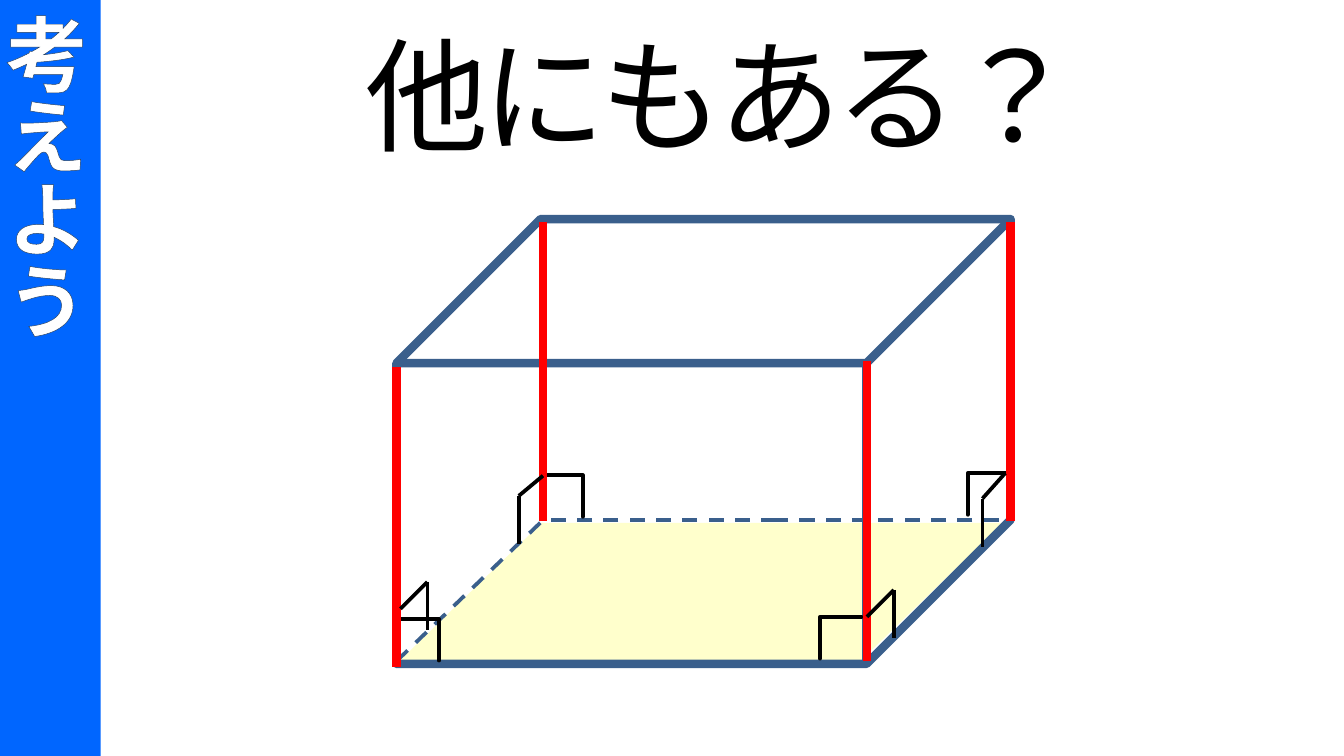
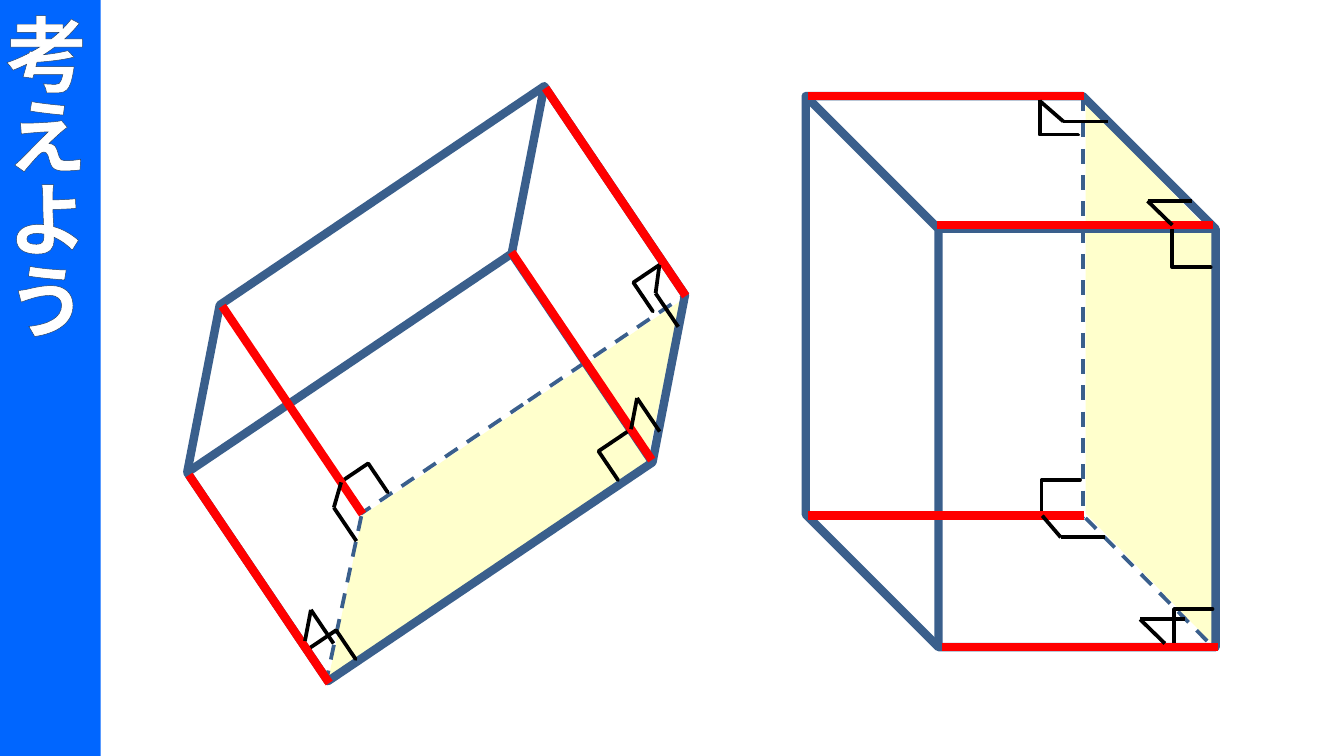
from collections import namedtuple
from math import cos, radians, sin

from lxml import etree
from pptx import Presentation
from pptx.dml.color import RGBColor
from pptx.enum.dml import MSO_LINE
from pptx.enum.lang import MSO_LANGUAGE_ID
from pptx.enum.shapes import MSO_CONNECTOR, MSO_SHAPE
from pptx.enum.text import MSO_ANCHOR, MSO_AUTO_SIZE, PP_ALIGN
from pptx.oxml.ns import qn
from pptx.util import Inches, Pt

STRAIGHT = MSO_CONNECTOR.STRAIGHT
DASH = MSO_LINE.DASH
JAPANESE = MSO_LANGUAGE_ID.JAPANESE
RECTANGLE = MSO_SHAPE.RECTANGLE
PARALLELOGRAM = MSO_SHAPE.PARALLELOGRAM
CUBE = MSO_SHAPE.CUBE
HALF_FRAME = MSO_SHAPE.HALF_FRAME
CENTER = PP_ALIGN.CENTER
MIDDLE, BOTTOM = MSO_ANCHOR.MIDDLE, MSO_ANCHOR.BOTTOM
NO_FIT, GROW = MSO_AUTO_SIZE.NONE, MSO_AUTO_SIZE.SHAPE_TO_FIT_TEXT
TITLE_ONLY, BLANK = 5, 6

FONT = "Noto Sans CJK JP"
WHITE, BLACK = "FFFFFF", "000000"
BAND_BLUE, OUTLINE_BLUE, EDGE_BLUE = "0066FF", "254061", "3A5F8C"
BASE_YELLOW, UPRIGHT_RED = "FFFFCC", "FF0000"
THICK, THIN = 4.5, 2

MODEL_WIDTH, MODEL_HEIGHT = 4.57, 3.31
UPRIGHT_LENGTH, TICK_LENGTH = 2.23, 0.36
BASE = (0, 2.26, 4.51, 1.05)
HIDDEN_FACE = (1.08, 0.01, 3.49, 2.23)
HIDDEN_EDGE = ((1.07, 2.26), (0.01, 3.28))

Corner = namedtuple("Corner", "mark mirrored upright_top tick_start tick_end")
CORNERS = [
    Corner((0.02, 2.99, 0.31, 0.28), False, (0, 1.1), (0.03, 2.9), (0.23, 2.7)),
    Corner((1.09, 1.92, 0.31, 0.28), False, (1.09, 0.02), (1.09, 1.91), (0.91, 2.06)),
    Corner((4.25, 1.89, 0.31, 0.31), True, (4.57, 0.02), (4.53, 1.89), (4.36, 2.08)),
    Corner((3.15, 2.96, 0.31, 0.31), True, (3.5, 1.06), (3.5, 2.96), (3.7, 2.76)),
]


def color(value):
    return RGBColor.from_string(value)


def format_line(line, value, width, dashed=False):
    line.color.rgb = color(value)
    line.width = Pt(width)
    if dashed:
        line.dash_style = DASH


def add_shape(shapes, kind, place, fill=None):
    shape = shapes.add_shape(kind, *map(Inches, place))
    shape.shadow.inherit = False
    if fill:
        shape.fill.solid()
        shape.fill.fore_color.rgb = color(fill)
    else:
        shape.fill.background()
    shape.line.fill.background()
    return shape


def format_run(span, size, value, bold=False):
    span.font.size = Pt(size)
    span.font.bold = bold
    span.font.name = FONT
    span.font.language_id = JAPANESE
    span.font.color.rgb = color(value)
    properties = span.font._element
    east_asian = etree.SubElement(properties, qn("a:ea"))
    east_asian.set("typeface", FONT)
    return properties


def add_band(slide):
    band = add_shape(slide.shapes, RECTANGLE, (-0.04, 0, 0.79, 5.65), BAND_BLUE)
    frame = band.text_frame
    frame.text = "考えよう"
    frame.word_wrap = True
    frame.auto_size = GROW
    frame.vertical_anchor = BOTTOM
    frame.margin_left, frame.margin_right = Inches(0), Inches(0.08)
    frame.margin_top = frame.margin_bottom = Inches(0.05)
    frame._txBody.bodyPr.set("vert", "eaVert")
    para = frame.paragraphs[0]
    para.alignment = CENTER
    para.line_spacing = Pt(50)
    properties = format_run(para.runs[0], 44, WHITE, True)
    outline = etree.Element(qn("a:ln"), w=str(Pt(0.75)))
    fill = etree.SubElement(outline, qn("a:solidFill"))
    etree.SubElement(fill, qn("a:srgbClr"), val=OUTLINE_BLUE)
    properties.insert(0, outline)


def set_title(slide, text):
    title = slide.shapes.title
    title.left, title.top, title.width, title.height = map(
        Inches, (0.73, 0.14, 9.27, 1.1))
    frame = title.text_frame
    frame.text = text
    frame.word_wrap = False
    frame.auto_size = NO_FIT
    frame.vertical_anchor = MIDDLE
    para = frame.paragraphs[0]
    para.alignment = CENTER
    format_run(para.runs[0], 66, BLACK).set("spc", "-300")


def draw_box(slide, box, angle=0):
    left, top, width, height = box
    scale_x, scale_y = width / MODEL_WIDTH, height / MODEL_HEIGHT
    cosine, sine = cos(radians(angle)), sin(radians(angle))
    shapes = slide.shapes.add_group_shape().shapes

    def locate(x, y):
        across = x * scale_x - width / 2
        down = y * scale_y - height / 2
        return (left + width / 2 + across * cosine - down * sine,
                top + height / 2 + across * sine + down * cosine)

    def add_part(kind, place, fill=None, turn=0):
        x, y, wide, high = place
        center_x, center_y = locate(x + wide / 2, y + high / 2)
        if turn:
            wide, high = wide * scale_y, high * scale_x
        else:
            wide, high = wide * scale_x, high * scale_y
        part = add_shape(shapes, kind, (center_x - wide / 2, center_y - high / 2,
                                        wide, high), fill)
        part.rotation = (angle + turn) % 360
        return part

    def add_edge(start, end, value, weight, dashed=False):
        ends = map(Inches, locate(*start) + locate(*end))
        edge = shapes.add_connector(STRAIGHT, *ends)
        format_line(edge.line, value, weight, dashed)
        etree.SubElement(edge._element.spPr, qn("a:effectLst"))

    def add_drop(start, length, value, weight):
        add_edge(start, (start[0], start[1] + length), value, weight)

    base = add_part(PARALLELOGRAM, BASE, BASE_YELLOW)
    base.adjustments[0] = 1.029
    hidden_face = add_part(RECTANGLE, HIDDEN_FACE)
    format_line(hidden_face.line, EDGE_BLUE, THIN, True)
    cube = add_part(CUBE, (0, 0, MODEL_WIDTH, MODEL_HEIGHT))
    cube.adjustments[0] = 0.324
    format_line(cube.line, EDGE_BLUE, THICK)
    add_edge(*HIDDEN_EDGE, EDGE_BLUE, THIN, True)

    for corner in CORNERS:
        mark = add_part(HALF_FRAME, corner.mark, BLACK, 90)
        mark.adjustments[0] = mark.adjustments[1] = 0
        format_line(mark.line, BLACK, THIN)
        if corner.mirrored:
            mark._element.spPr.find(qn("a:xfrm")).set("flipV", "1")
        add_drop(corner.upright_top, UPRIGHT_LENGTH, UPRIGHT_RED, THICK)
    for corner in CORNERS:
        add_edge(corner.tick_start, corner.tick_end, BLACK, THIN)
        add_drop(corner.tick_end, TICK_LENGTH, BLACK, THIN)


def add_question_slide(deck):
    slide = deck.slides.add_slide(deck.slide_layouts[TITLE_ONLY])
    set_title(slide, "他にもある？")
    add_band(slide)
    draw_box(slide, (2.95, 1.63, MODEL_WIDTH, MODEL_HEIGHT))


def add_turned_boxes_slide(deck):
    slide = deck.slides.add_slide(deck.slide_layouts[BLANK])
    add_band(slide)
    draw_box(slide, (1.34, 1.47, 3.81, 2.77), 326)
    draw_box(slide, (5.47, 1.24, 4.1, 3.05), 270)


def main():
    deck = Presentation()
    deck.slide_width = Inches(10)
    deck.slide_height = deck.slide_width * 9 // 16
    add_question_slide(deck)
    add_turned_boxes_slide(deck)
    deck.save("out.pptx")


if __name__ == "__main__":
    main()
